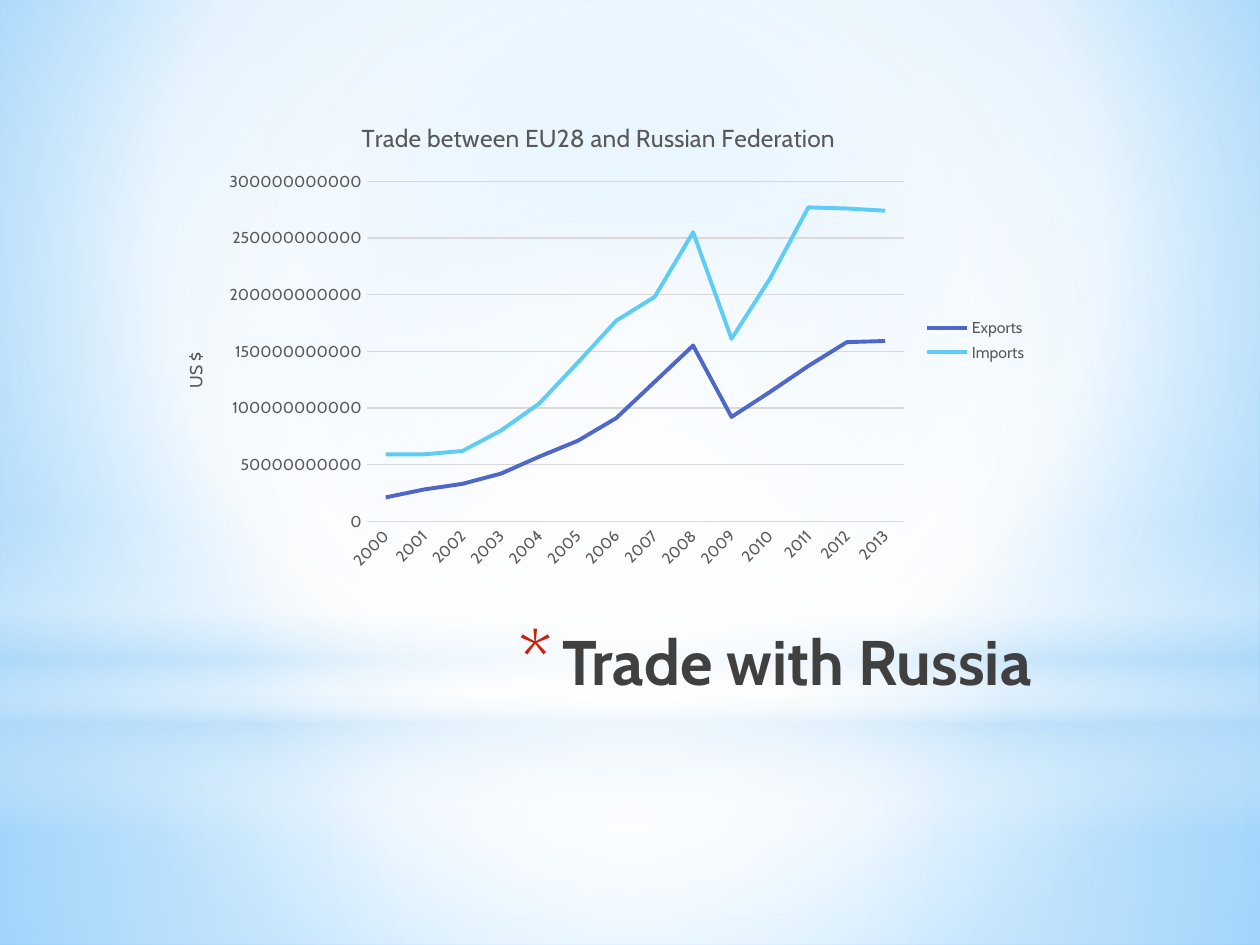
import pptx
import pptx.chart.data
import pptx.dml.color
import pptx.enum.chart
import pptx.enum.shapes
import pptx.enum.text
import pptx.oxml
import pptx.oxml.ns
import pptx.util
from pptx.util import Cm, Pt

COLORS = {
    "white": "FFFFFF", "sky": "B4DCFA", "pale": "9ED5FF", "azure": "5BB9FF",
    "ink": "404040", "label": "595959", "grid": "D9D9D9", "bullet": "C3260C",
    "exports": "4E67C8", "imports": "5ECCF3",
}
NAMESPACE = pptx.oxml.ns.nsdecls("a")
CENTER = (50, 50, 50, 50)
BILLION = 10 ** 9
YEARS = [str(year) for year in range(2000, 2014)]
TRADE = {
    "Exports": [21, 28, 33, 42, 57, 71, 91, 123, 155, 92, 114, 137, 158, 159],
    "Imports": [59, 59, 62, 80, 104, 140, 177, 198, 255, 161, 214, 277, 276, 274],
}


class SlideBuilder:
    font = "Cabin"

    def __init__(self, slide):
        self.slide = slide

    def color(self, name):
        return pptx.dml.color.RGBColor.from_string(COLORS[name])

    def style(self, font, size, color, bold=False):
        font.name = self.font
        font.size = Pt(size)
        font.bold = bold
        font.color.rgb = self.color(color)

    def line(self, line, color, width):
        line.color.rgb = self.color(color)
        line.width = Pt(width)

    def gradient(self, fill, owner, stops, focus=None):
        fill.gradient()
        old = owner.find(".//" + pptx.oxml.ns.qn("a:gradFill"))
        stop_xml = "".join(
            f'<a:gs pos="{position * 1000}"><a:srgbClr val="{COLORS[name]}">'
            f'<a:alpha val="{opacity * 1000}"/></a:srgbClr></a:gs>'
            for position, name, opacity in stops
        )
        if focus:
            sides = " ".join(f'{side}="{value * 1000}"' for side, value in zip("ltrb", focus))
            direction = f'<a:path path="circle"><a:fillToRect {sides}/></a:path>'
        else:
            direction = '<a:lin ang="5400000" scaled="0"/>'
        new = pptx.oxml.parse_xml(
            f'<a:gradFill {NAMESPACE} rotWithShape="1"><a:gsLst>{stop_xml}</a:gsLst>'
            f"{direction}</a:gradFill>"
        )
        old.getparent().replace(old, new)

    def background(self, stops, focus):
        self.gradient(self.slide.background.fill, self.slide.element, stops, focus)

    def glow(self, kind, top, height, stops, focus=None):
        shape = self.slide.shapes.add_shape(kind, 0, Cm(top), Cm(25.4), Cm(height))
        shape.shadow.inherit = False
        shape.line.fill.background()
        self.gradient(shape.fill, shape.element, stops, focus)

    def title(self, text, left, top, width, height):
        shape = self.slide.shapes.title
        shape.left, shape.top, shape.width, shape.height = map(Cm, (left, top, width, height))
        frame = shape.text_frame
        frame.text = text
        frame.word_wrap = True
        frame.auto_size = pptx.enum.text.MSO_AUTO_SIZE.NONE
        frame.vertical_anchor = pptx.enum.text.MSO_ANCHOR.MIDDLE
        paragraph = frame.paragraphs[0]
        paragraph.alignment = pptx.enum.text.PP_ALIGN.RIGHT
        self.style(paragraph.font, 36, "ink", True)
        properties = paragraph._p.get_or_add_pPr()
        properties.set("marL", str(Cm(0.89)))
        properties.set("indent", str(-Cm(0.89)))
        bullet = (
            f'<a:buClr {NAMESPACE}><a:srgbClr val="{COLORS["bullet"]}"/></a:buClr>',
            f'<a:buSzPct {NAMESPACE} val="128000"/>',
            f'<a:buFont {NAMESPACE} typeface="{self.font}"/>',
            f'<a:buChar {NAMESPACE} char="*"/>',
        )
        for index, xml in enumerate(bullet):
            properties.insert(index, pptx.oxml.parse_xml(xml))

    def caption(self, owner, text, size):
        frame = owner.text_frame
        frame.text = text
        self.style(frame.paragraphs[0].font, size, "label")

    def line_chart(self, title, unit, categories, series, left, top, width, height):
        data = pptx.chart.data.CategoryChartData(number_format="0")
        data.categories = categories
        for name, values in series.items():
            data.add_series(name, [value * BILLION for value in values])
        chart = self.slide.shapes.add_chart(
            pptx.enum.chart.XL_CHART_TYPE.LINE,
            Cm(left), Cm(top), Cm(width), Cm(height), data,
        ).chart
        self.style(chart.font, 9, "label")
        chart.has_title = True
        self.caption(chart.chart_title, title, 14)
        chart.chart_title.include_in_layout = False
        chart.has_legend = True
        chart.legend.position = pptx.enum.chart.XL_LEGEND_POSITION.RIGHT
        chart.legend.include_in_layout = False
        self.style(chart.legend.font, 9, "label")

        for axis in (chart.category_axis, chart.value_axis):
            axis.major_tick_mark = pptx.enum.chart.XL_TICK_MARK.NONE
            axis.minor_tick_mark = pptx.enum.chart.XL_TICK_MARK.NONE
            self.style(axis.tick_labels.font, 9, "label")
        self.line(chart.category_axis.format.line, "grid", 0.75)
        axis = chart.value_axis
        axis.minimum_scale = 0
        axis.maximum_scale = 300 * BILLION
        axis.major_unit = 50 * BILLION
        axis.tick_labels.number_format = "0"
        axis.tick_labels.number_format_is_linked = False
        axis.format.line.fill.background()
        self.line(axis.major_gridlines.format.line, "grid", 0.75)
        axis.has_title = True
        self.caption(axis.axis_title, unit, 10)

        plot = chart.plots[0]
        plot.vary_by_categories = False
        for item in plot.series:
            item.smooth = False
            item.marker.style = pptx.enum.chart.XL_MARKER_STYLE.NONE
            self.line(item.format.line, item.name.lower(), 2.25)


def main():
    presentation = pptx.Presentation()
    presentation.slide_width = Cm(25.4)
    presentation.slide_height = Cm(19.05)
    builder = SlideBuilder(presentation.slides.add_slide(presentation.slide_layouts[5]))
    rectangle = pptx.enum.shapes.MSO_SHAPE.RECTANGLE
    ellipse = pptx.enum.shapes.MSO_SHAPE.OVAL

    builder.background(
        [(0, "pale", 100), (60, "white", 100), (100, "azure", 100)], (20, 10, 20, 60))
    builder.glow(rectangle, 14.17, 4.88,
                 [(0, "white", 91), (37, "white", 76), (100, "sky", 79)], CENTER)
    builder.glow(rectangle, 0, 14.17,
                 [(0, "white", 89), (48, "white", 62), (100, "sky", 79)], CENTER)
    builder.glow(rectangle, 10.46, 6.35,
                 [(0, "white", 0), (29, "white", 30), (45, "sky", 40),
                  (55, "white", 26), (65, "sky", 60), (100, "white", 0)])
    builder.glow(ellipse, 4.45, 14.17, [(0, "white", 100), (56, "white", 0)], CENTER)

    title_element = builder.slide.shapes.title.element
    title_element.getparent().append(title_element)
    builder.title("Trade with Russia", 9.09, 12.32, 11.96, 1.98)
    builder.line_chart("Trade between EU28 and Russian Federation", "US $",
                       YEARS, TRADE, 3.18, 2.03, 17.78, 9.65)
    presentation.save("out.pptx")


if __name__ == "__main__":
    main()
